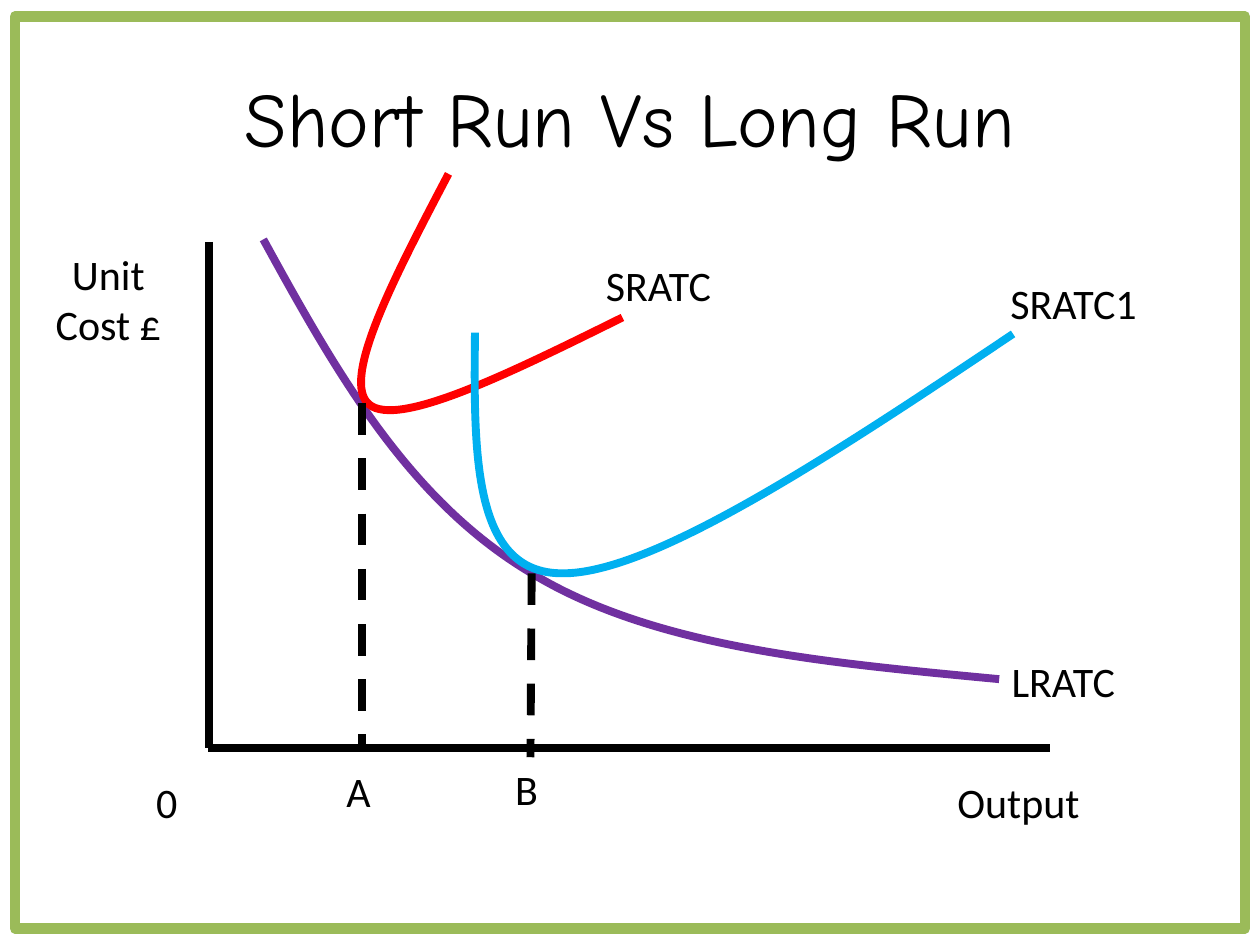
from itertools import chain

from lxml.etree import SubElement
from pptx import Presentation
from pptx.dml.color import RGBColor
from pptx.enum.dml import MSO_LINE_DASH_STYLE as Dash
from pptx.enum.shapes import MSO_CONNECTOR as Connector, MSO_SHAPE as Shape
from pptx.enum.text import MSO_ANCHOR as Anchor, PP_ALIGN as Align
from pptx.oxml.ns import qn
from pptx.util import Inches, Pt

COLORS = {
    "black": "000000",
    "frame": "9BBB59",
    "long_run": "7030A0",
    "short_run": "FF0000",
    "short_run_1": "00B0F0",
}
LINE_WIDTH = 4.5

TITLE = ("Short Run Vs Long Run", (0.5, 0.3, 9, 1.25))
FRAME = (0.12, 0.13, 9.76, 7.24)

# text, (left, top, width, height), alignment
LABELS = [
    ("Unit Cost £", (0.23, 1.92, 1.26, 0.91), Align.CENTER),
    ("Output", (7.5, 6.11, 1.65, 0.5), Align.LEFT),
    ("SRATC", (4.71, 2.01, 1.2, 0.5), Align.LEFT),
    ("SRATC1", (7.92, 2.15, 1.36, 0.5), Align.LEFT),
    ("LRATC", (7.93, 5.15, 1.12, 0.5), Align.LEFT),
    ("0", (1.14, 6.11, 0.5, 0.5), Align.LEFT),
    ("A", (2.65, 6.03, 0.44, 0.5), Align.LEFT),
    ("B", (3.99, 6.01, 0.44, 0.5), Align.LEFT),
]

AXES = [((1.66, 1.92), (1.66, 5.94)), ((8.33, 5.94), (1.65, 5.94))]
OUTPUT_LEVELS = [((2.87, 3.2), (2.87, 5.94)), ((4.22, 4.55), (4.21, 6.01))]

# start point, then two control points and an end point for each Bezier piece
LRATC = [(2.09, 1.9), (2.66, 2.94), (3.24, 3.97), (4.22, 4.55),
         (5.19, 5.14), (6.56, 5.26), (7.93, 5.39)]
SRATC = [(3.56, 1.38), (3.13, 2.2), (2.7, 3.02), (2.93, 3.21),
         (3.16, 3.4), (4.05, 2.96), (4.94, 2.52)]
SRATC1 = [(3.77, 2.64), (3.76, 3.6), (3.75, 4.55), (4.46, 4.55),
          (5.17, 4.56), (6.61, 3.61), (8.04, 2.65)]


def rgb(color):
    return RGBColor.from_string(COLORS[color])


def style_line(line, color, width=LINE_WIDTH):
    line.color.rgb = rgb(color)
    line.width = Pt(width)


def add_text(slide, text, box, size, font, align, anchor=Anchor.TOP):
    frame = slide.shapes.add_textbox(*map(Inches, box)).text_frame
    frame.word_wrap = True
    frame.vertical_anchor = anchor
    paragraph = frame.paragraphs[0]
    paragraph.text = text
    paragraph.alignment = align
    paragraph.font.size = Pt(size)
    paragraph.font.name = font
    paragraph.font.color.rgb = rgb("black")


def add_line(slide, start, end, dash=None):
    line = slide.shapes.add_connector(
        Connector.STRAIGHT, *map(Inches, chain(start, end)))
    style_line(line.line, "black")
    line.line.dash_style = dash
    SubElement(line._element.spPr, qn("a:effectLst"))


def add_curve(slide, points, color):
    """Draw the points as one outline, then merge each three segments into a Bezier."""
    start, *rest = [(Inches(x), Inches(y)) for x, y in points]
    builder = slide.shapes.build_freeform(*start)
    builder.add_line_segments(rest, close=False)
    curve = builder.convert_to_shape()
    outline = curve._element.find(".//" + qn("a:path"))
    segments = outline.findall(qn("a:lnTo"))
    for first in range(0, len(segments), 3):
        bezier = SubElement(outline, qn("a:cubicBezTo"))
        for segment in segments[first:first + 3]:
            bezier.append(segment[0])
            outline.remove(segment)
    curve.fill.background()
    curve.shadow.inherit = False
    style_line(curve.line, color)


def main():
    prs = Presentation()
    prs.slide_width, prs.slide_height = Inches(10), Inches(7.5)
    slide = prs.slides.add_slide(prs.slide_layouts[6])

    add_text(slide, *TITLE, 44, "Comic Neue", Align.CENTER, Anchor.MIDDLE)
    border = slide.shapes.add_shape(Shape.RECTANGLE, *map(Inches, FRAME))
    border.fill.background()
    border.shadow.inherit = False
    style_line(border.line, "frame", 6)

    for start, end in AXES:
        add_line(slide, start, end)
    for text, box, align in LABELS:
        add_text(slide, text, box, 24, "Calibri", align)
    add_curve(slide, LRATC, "long_run")
    add_curve(slide, SRATC, "short_run")
    for start, end in OUTPUT_LEVELS:
        add_line(slide, start, end, Dash.DASH)
    add_curve(slide, SRATC1, "short_run_1")

    prs.save("out.pptx")


if __name__ == "__main__":
    main()
